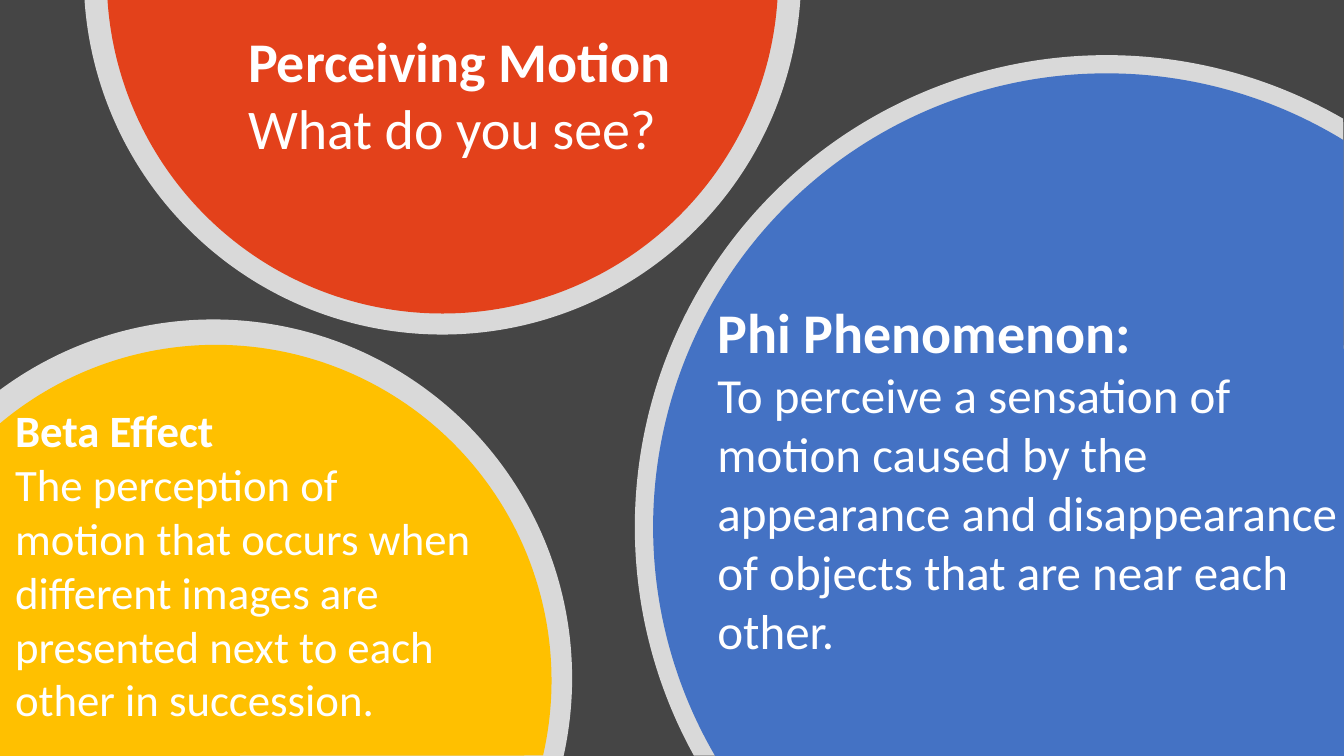
"""Build a slide on perceived motion with three ringed discs."""
import math

import lxml.etree
import pptx
import pptx.dml.color
import pptx.enum.text
import pptx.oxml.ns
import pptx.util

Cm = pptx.util.Cm
qn = pptx.oxml.ns.qn
WIDE, HIGH = 33.87, 19.05
DARK, WHITE = "454545", "FFFFFF"

DISCS = [
    {"ring": (11.15, -0.61, 9.04), "core": (11.15, -0.56, 8.46),
     "corners": [], "fill": "E3411B"},
    {"ring": (5.38, 17.09, 9.04), "core": (5.44, 17.15, 8.46),
     "corners": [(0, HIGH)], "fill": "FFC000"},
    {"ring": (27.89, 13.28, 11.89), "core": (27.89, 13.28, 11.43),
     "corners": [(WIDE, HIGH)], "fill": "4472C4"},
]

TITLE = {"at": (6, 0.53, 12.62, 3.68), "text": [
    ("Perceiving Motion", 40), ("What do you see?", 40)]}
NOTES = [
    {"at": (0.13, 10.03, 12.19, 8.46), "text": [
        ("Beta Effect", 32),
        ("The perception of motion that occurs when different images are "
         "presented next to each other in succession.", 32)]},
    {"at": (17.83, 7.37, 17.17, 9.45), "text": [
        ("Phi Phenomenon:", 40),
        ("To perceive a sensation of motion caused by the appearance and "
         "disappearance of objects that are near each other.", 35)]},
]

FRAME = {
    "word_wrap": True,
    "auto_size": pptx.enum.text.MSO_AUTO_SIZE.SHAPE_TO_FIT_TEXT,
    "vertical_anchor": pptx.enum.text.MSO_ANCHOR.TOP,
    "margin_left": Cm(0.25), "margin_right": Cm(0.25),
    "margin_top": Cm(0.13), "margin_bottom": Cm(0.13),
}
PARA = {
    "alignment": pptx.enum.text.PP_ALIGN.LEFT,
    "line_spacing": 1.0,
    "space_before": pptx.util.Pt(0),
}


def assign(item, values):
    for name, value in values.items():
        setattr(item, name, value)


def paint(fill, color):
    fill.solid()
    fill.fore_color.rgb = pptx.dml.color.RGBColor.from_string(color)


def locate(circle, tenths):
    mid_x, mid_y, radius = circle
    angle = math.radians(tenths / 10)
    return mid_x + radius * math.cos(angle), mid_y + radius * math.sin(angle)


def shown(circle, tenths):
    left, top = locate(circle, tenths)
    return 0 <= left <= WIDE and 0 <= top <= HIGH


def add_disc(shapes, circle, corners, color, alpha=None):
    start = next(t for t in range(3600)
                 if shown(circle, t) and not shown(circle, t - 1))
    sweep = sum(shown(circle, t) for t in range(3600)) - 1
    end = start + sweep
    turns = [start, *(t for t in range(0, 7200, 900) if start < t < end), end]
    spots = [locate(circle, t) for t in turns] + corners
    points = [(Cm(left), Cm(top)) for left, top in spots]
    outline = shapes.build_freeform(*points[0])
    outline.add_line_segments(points[1:], close=True)
    disc = outline.convert_to_shape()

    lines = disc._element.findall(".//" + qn("a:lnTo"))[:len(turns) - 1]
    radius = str(Cm(circle[2]))
    arc = lxml.etree.Element(qn("a:arcTo"), wR=radius, hR=radius,
                             stAng=str(start * 6000), swAng=str(sweep * 6000))
    lines[0].addprevious(arc)
    for line in lines:
        line.getparent().remove(line)

    disc.shadow.inherit = False
    disc.line.fill.background()
    paint(disc.fill, color)
    if alpha:
        tone = disc._element.spPr.find(".//" + qn("a:srgbClr"))
        lxml.etree.SubElement(tone, qn("a:alpha"), val=str(alpha * 1000))


def write(box, note):
    assign(box, dict(zip(("left", "top", "width", "height"), map(Cm, note["at"]))))
    frame = box.text_frame
    assign(frame, FRAME)
    for order, (text, size) in enumerate(note["text"]):
        para = frame.add_paragraph() if order else frame.paragraphs[0]
        assign(para, PARA)
        run = para.add_run()
        run.text = text
        assign(run.font, {"name": "Calibri", "size": pptx.util.Pt(size), "bold": order == 0})
        paint(run.font.fill, WHITE)


def main():
    deck = pptx.Presentation()
    assign(deck, {"slide_width": Cm(WIDE), "slide_height": Cm(HIGH)})
    slide = deck.slides.add_slide(deck.slide_layouts[5])
    shapes = slide.shapes
    paint(slide.background.fill, DARK)
    for disc in DISCS:
        add_disc(shapes, disc["ring"], disc["corners"], WHITE, alpha=80)
        add_disc(shapes, disc["core"], disc["corners"], disc["fill"])
    title = shapes.title
    shapes._spTree.append(title._element)
    write(title, TITLE)
    for note in NOTES:
        write(shapes.add_textbox(0, 0, 0, 0), note)
    deck.save("out.pptx")


if __name__ == "__main__":
    main()
